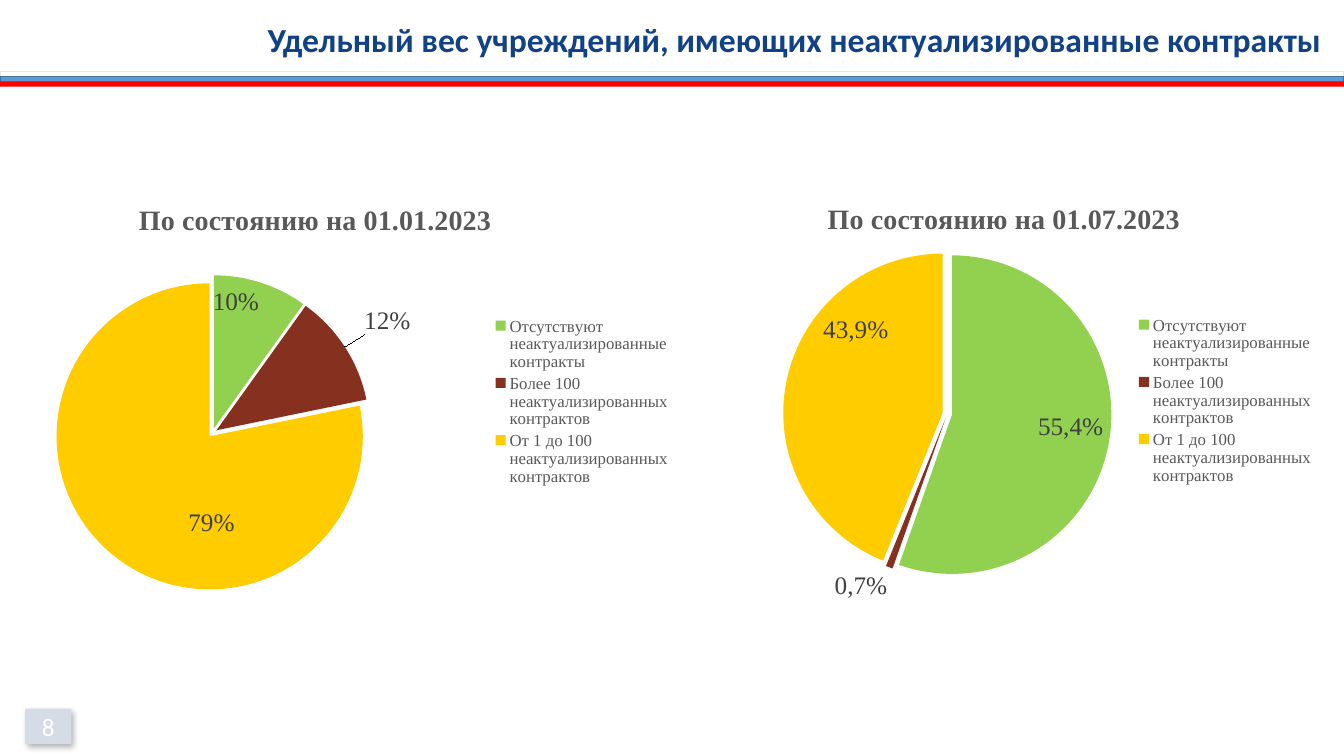
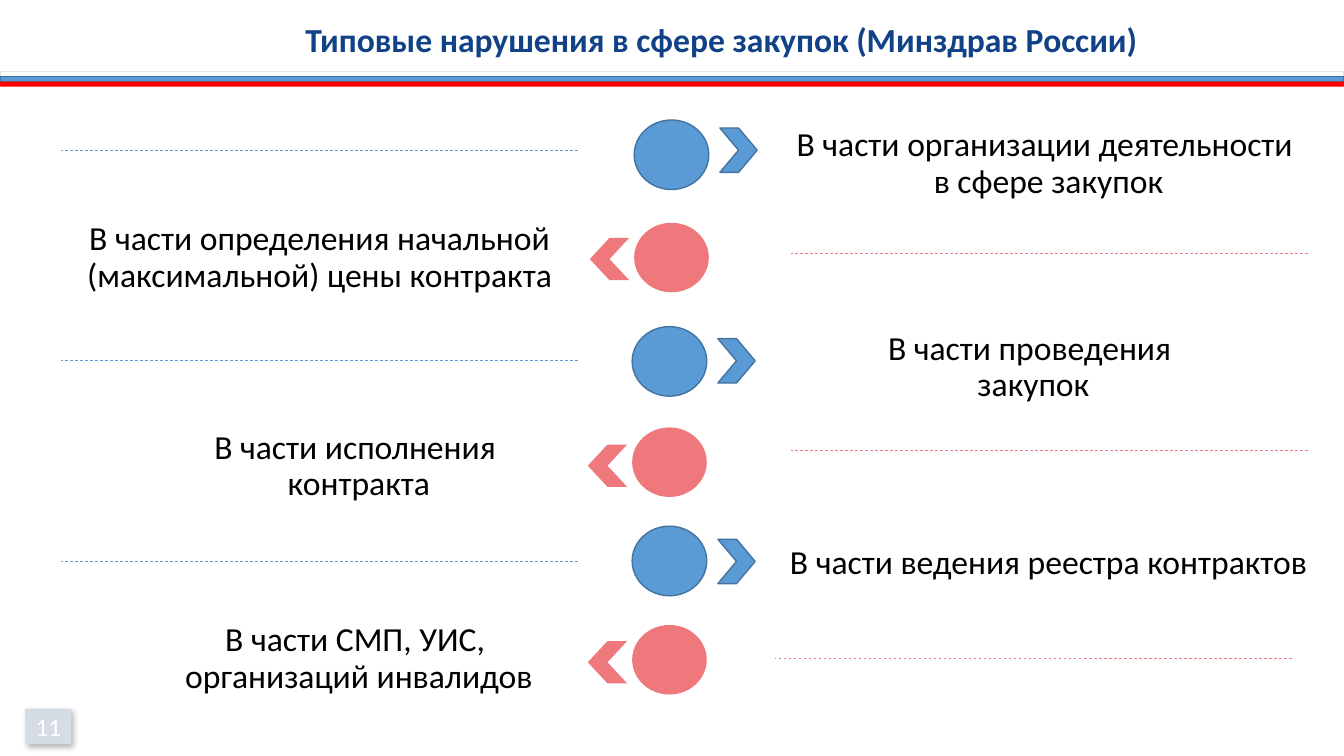
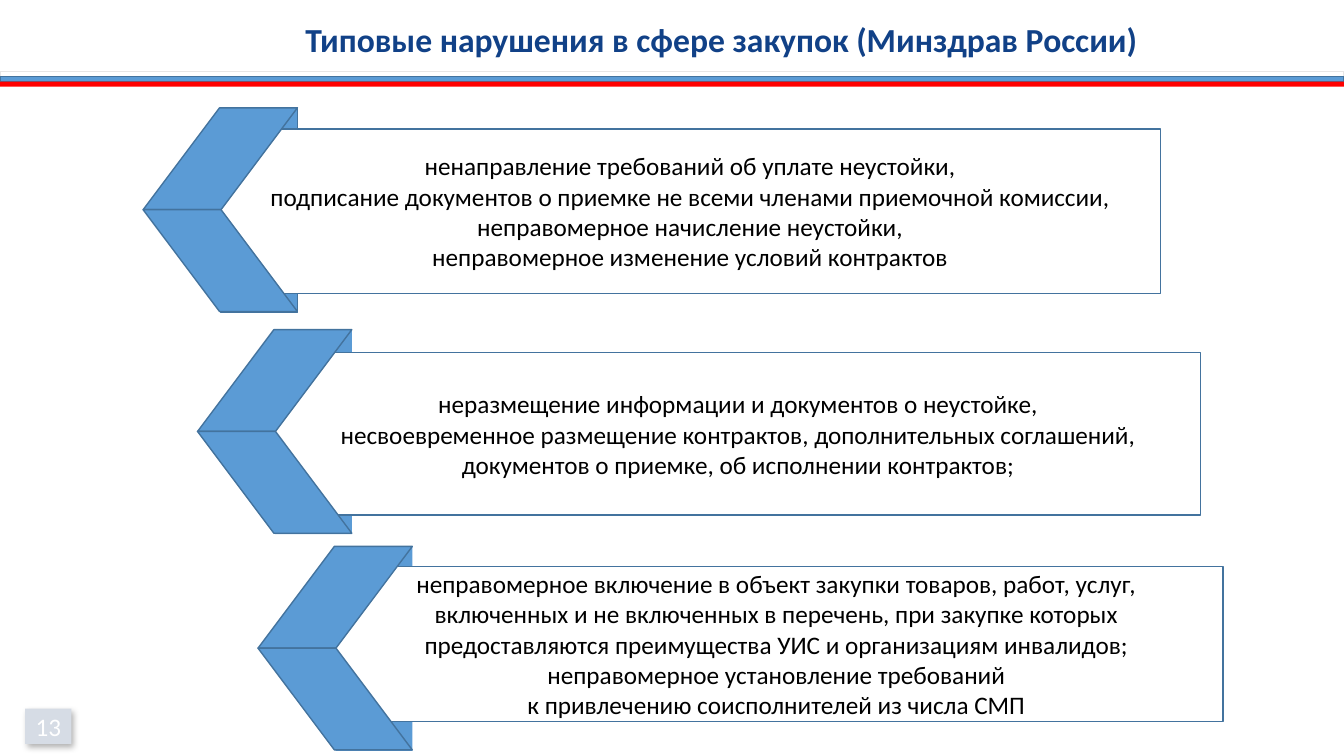
from pptx import Presentation
from pptx.chart import data
from pptx.dml.color import RGBColor
from pptx.enum import chart as charts, dml, shapes, text
from pptx.oxml import parse_xml
from pptx.oxml.ns import nsdecls
from pptx.util import Pt

PX = 9144
WHITE = RGBColor(0xFF, 0xFF, 0xFF)
BLACK = RGBColor(0, 0, 0)
NAVY = RGBColor(0x11, 0x41, 0x87)
BLUE = RGBColor(0x5B, 0x9B, 0xD5)
EDGE = RGBColor(0x43, 0x73, 0x9E)
RED = RGBColor(0xFF, 0, 0)
PINK = RGBColor(0xEE, 0x78, 0x7B)
PALE = RGBColor(0xE7, 0xE6, 0xE6)
BADGE = RGBColor(0xD6, 0xDC, 0xE5)
GREY = RGBColor(0x59, 0x59, 0x59)
DARK = RGBColor(0x40, 0x40, 0x40)
SLICES = [RGBColor(0x92, 0xD0, 0x50), RGBColor(0x86, 0x30, 0x1F), RGBColor(0xFF, 0xCC, 0)]

SANS, SERIF = "Calibri", "Times New Roman"
SHAPE = shapes.MSO_SHAPE
LABEL = charts.XL_LABEL_POSITION
TYPICAL = "Типовые нарушения в сфере закупок (Минздрав России)"
CATEGORIES = [
    "Отсутствуют неактуализированные контракты",
    "Более 100 неактуализированных контрактов",
    "От 1 до 100 неактуализированных контрактов",
]
INSIDE, OUTSIDE, CENTER = LABEL.INSIDE_END, LABEL.OUTSIDE_END, LABEL.CENTER
PIES = [
    dict(box=(-38, 173, 711, 446), title="По состоянию на 01.01.2023",
         title_at=(0.24, 0.05), pie_at=(0.13, 0.22, 0.44, 0.71), legend_at=(0.74, 0.31, 0.25, 0.39),
         slices=[(10, "10%", INSIDE, (0, 0)), (12, "12%", OUTSIDE, (0.02, -0.02)),
                 (79, "79%", CENTER, (0.07, 0.06))]),
    dict(box=(692, 172, 619, 446), title="По состоянию на 01.07.2023",
         title_at=(0.2, 0.05), pie_at=(0.13, 0.17, 0.54, 0.73), legend_at=(0.7, 0.31, 0.29, 0.39),
         slices=[(55.4, "55,4%", INSIDE, (0, 0)), (0.7, "0,7%", OUTSIDE, (0, 0)),
                 (43.9, "43,9%", INSIDE, (0.05, -0.15))]),
]
ROWS = [
    ((629, 119), 8, (732, 3), (61, 30), "В части организации деятельности \nв сфере закупок"),
    ((629, 221), 15, (9, -6), (785, 30), "В части определения начальной (максимальной) цены контракта"),
    ((627, 324), 12, (717, 0), (61, 34), "В части проведения \nзакупок"),
    ((627, 424), 17, (48, -2), (785, 23), "В части исполнения \nконтракта"),
    ((627, 522), 13, (732, 14), (61, 35), "В части ведения реестра контрактов"),
    ((627, 620), 16, (48, -7), (769, 33), "В части СМП, УИС, \nорганизаций инвалидов"),
]
CARDS = [
    ((142, 107), (218, 128, 933, 163), EDGE, [
        "ненаправление требований об уплате неустойки,",
        "подписание документов о приемке не всеми членами приемочной комиссии,",
        "неправомерное начисление неустойки,",
        "неправомерное изменение условий контрактов"]),
    ((196, 327), (273, 350, 918, 161), None, [
        "неразмещение информации и документов о неустойке,",
        "несвоевременное размещение контрактов, дополнительных соглашений,",
        "документов о приемке, об исполнении контрактов;"]),
    ((256, 542), (327, 562, 886, 154), None, [
        "неправомерное включение в объект закупки товаров, работ, услуг,",
        "включенных и не включенных в перечень, при закупке которых",
        "предоставляются преимущества УИС и организациям инвалидов;",
        "неправомерное установление требований",
        "к привлечению соисполнителей из числа СМП"]),
]


def px(*lengths):
    """Turn px lengths into EMU."""
    return [round(n * PX) for n in lengths]


def style(font, size, color, name=SANS, bold=False):
    """Set the look of a font."""
    font.size, font.name, font.bold = Pt(size), name, bold
    font.color.rgb = color


def add_shape(slide, kind, box, fill, line=None):
    """Add a flat filled shape with an optional outline."""
    sp = slide.shapes.add_shape(kind, *px(*box))
    sp.shadow.inherit = False
    sp.fill.solid()
    sp.fill.fore_color.rgb = fill
    if line is None:
        sp.line.fill.background()
    else:
        sp.line.color.rgb = line
        sp.line.width = Pt(1)
    return sp


def write(sp, lines, size, color, bold=False):
    """Write centred paragraphs into a shape."""
    tf = sp.text_frame
    tf.word_wrap = True
    for i, line in enumerate(lines):
        p = tf.add_paragraph() if i else tf.paragraphs[0]
        p.text = line
        p.alignment = text.PP_ALIGN.CENTER
        style(p.font, size, color, bold=bold)
    return tf


def add_page(prs, title, number, title_width=995):
    """Add a slide with the shared title, bands and page badge."""
    slide = prs.slides.add_slide(prs.slide_layouts[5])
    sp = slide.shapes.title
    sp.left, sp.top, sp.width, sp.height = px(218, 14, title_width, 50)
    write(sp, [title], 24, NAVY, bold=True)
    for i, (fill, line) in enumerate([(WHITE, PALE), (BLUE, EDGE), (RED, None)]):
        add_shape(slide, SHAPE.RECTANGLE, (0, 71 + 5 * i, 1333, 5), fill, line)
    badge = add_shape(slide, SHAPE.RECTANGLE, (25, 703, 46, 35), BADGE)
    tf = write(badge, [str(number)], 18, WHITE)
    tf.margin_left = tf.margin_right = 0
    tf.vertical_anchor = text.MSO_ANCHOR.MIDDLE
    effects = badge.element.spPr.xpath("a:effectLst")[0]
    effects.append(parse_xml(
        f'<a:outerShdw {nsdecls("a")} blurRad="{Pt(4.5)}" dist="{Pt(2.6)}" dir="3180000">'
        '<a:srgbClr val="000000"><a:alpha val="30000"/></a:srgbClr></a:outerShdw>'))
    return slide


def lay_out(element, index, box, modes=("x", "y")):
    """Give a chart part a manual layout in fractions of the chart."""
    for old in element.xpath("c:layout"):
        element.remove(old)
    target = '<c:layoutTarget val="inner"/>' if index == 0 else ""
    edges = "".join(f'<c:{m}Mode val="edge"/>' for m in modes)
    sizes = "".join(f'<c:{k} val="{v}"/>' for k, v in zip("xywh", box))
    element.insert(index, parse_xml(
        f'<c:layout {nsdecls("c")}><c:manualLayout>{target}{edges}{sizes}'
        '</c:manualLayout></c:layout>'))


def add_pie(slide, box, title, title_at, pie_at, legend_at, slices):
    """Add an exploded pie with title, legend and placed labels."""
    cd = data.CategoryChartData()
    cd.categories = CATEGORIES
    cd.add_series("Series 1", [s[0] for s in slices])
    chart = slide.shapes.add_chart(charts.XL_CHART_TYPE.PIE, *px(*box), cd).chart
    style(chart.font, 10, BLACK)
    chart.has_title = True
    r = chart.chart_title.text_frame.paragraphs[0].add_run()
    r.text = title
    style(r.font, 20, GREY, SERIF, True)
    chart.has_legend = True
    chart.legend.position = charts.XL_LEGEND_POSITION.RIGHT
    chart.legend.include_in_layout = False
    style(chart.legend.font, 12, GREY, SERIF)

    plot = chart.plots[0]
    plot.vary_by_categories = True
    series = plot.series[0]
    series.data_labels.show_value = True
    style(series.data_labels.font, 18, DARK, SERIF)
    for i, (_, caption, position, _) in enumerate(slices):
        point = series.points[i]
        point.format.fill.solid()
        point.format.fill.fore_color.rgb = SLICES[i]
        r = point.data_label.text_frame.paragraphs[0].add_run()
        r.text = caption
        style(r.font, 18, DARK, SERIF)
        point.data_label.position = position

    root = chart._chartSpace
    root.xpath(".//c:dPt")[0].addprevious(
        parse_xml(f'<c:explosion {nsdecls("c")} val="3"/>'))
    lay_out(root.xpath("c:chart/c:title")[0], 1, title_at)
    lay_out(root.xpath("c:chart/c:plotArea")[0], 0, pie_at)
    lay_out(root.xpath("c:chart/c:legend")[0], 1, legend_at)
    for label, (_, _, _, shift) in zip(root.xpath(".//c:dLbl"), slices):
        if any(shift):
            lay_out(label, 1, shift, modes=())


def add_row(slide, circle_at, chevron_dy, text_at, rule_at, caption, to_right):
    """Add a circle with its chevron, caption and dashed rule."""
    x, y = circle_at
    fill, line = (BLUE, EDGE) if to_right else (PINK, None)
    add_shape(slide, SHAPE.OVAL, (x, y, 74, 69), fill, line)
    size = (37, 44) if to_right else (39, 42)
    chevron_x = x + (85 if to_right else -44)
    chevron = add_shape(slide, SHAPE.CHEVRON, (chevron_x, y + chevron_dy, *size), fill, line)
    chevron.rotation = 0 if to_right else 180

    sp = slide.shapes.add_textbox(*px(text_at[0], y + text_at[1], 616, 88))
    p = write(sp, [caption], 24, BLACK).paragraphs[0]
    p.line_spacing = 0.9
    p.space_before = Pt(10)

    left, top = rule_at[0], y + rule_at[1]
    rule = slide.shapes.add_connector(
        shapes.MSO_CONNECTOR.STRAIGHT, *px(left + 512, top, left, top))
    rule.line.color.rgb = fill
    rule.line.width = Pt(0.5)
    rule.line.dash_style = dml.MSO_LINE.DASH
    rule.element.spPr.append(parse_xml(f'<a:effectLst {nsdecls("a")}/>'))


def add_card(slide, arrow_at, box, edge, lines):
    """Add a bordered text card with a folded arrow on its left."""
    x, y = arrow_at
    add_shape(slide, SHAPE.RECTANGLE, (x + 77, y, 76, 203), BLUE, edge)
    card = add_shape(slide, SHAPE.RECTANGLE, box, WHITE, EDGE)
    write(card, lines, 18, BLACK).vertical_anchor = text.MSO_ANCHOR.MIDDLE
    for i in range(2):
        arm = add_shape(slide, SHAPE.PARALLELOGRAM, (x, y + 101 * i, 153, 101), BLUE, EDGE)
        arm.adjustments[0] = 0.75
        if i:
            arm.element.spPr.xfrm.set("flipH", "1")


def main():
    """Build and save the three slides."""
    prs = Presentation()
    prs.slide_width, prs.slide_height = px(1333, 750)

    slide = add_page(prs, "Удельный вес учреждений, имеющих неактуализированные контракты", 8, 1140)
    for pie in PIES:
        add_pie(slide, **pie)

    slide = add_page(prs, TYPICAL, 11)
    for i, row in enumerate(ROWS):
        add_row(slide, *row, to_right=i % 2 == 0)

    slide = add_page(prs, TYPICAL, 13)
    for card in CARDS:
        add_card(slide, *card)

    prs.save("out.pptx")


if __name__ == "__main__":
    main()
